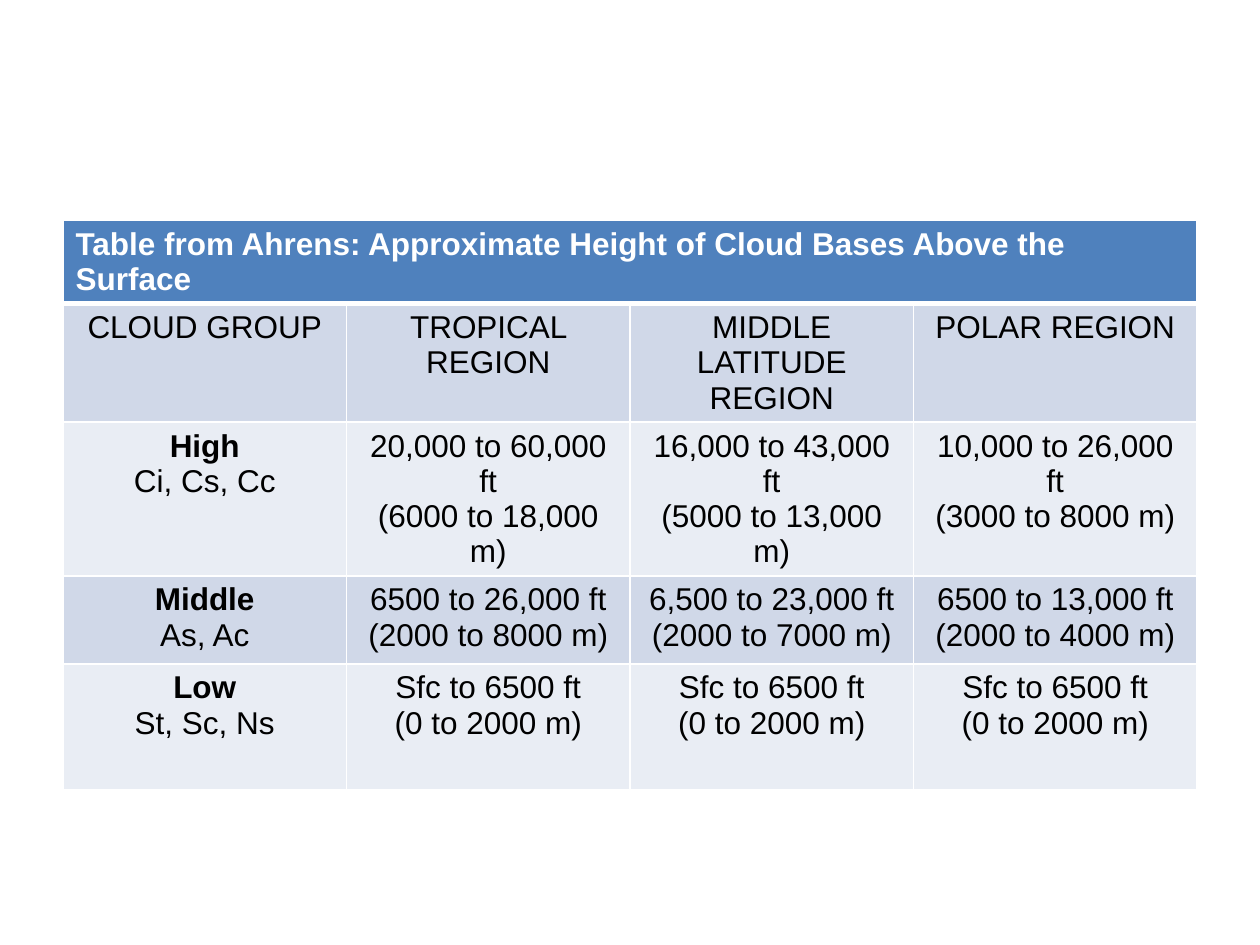
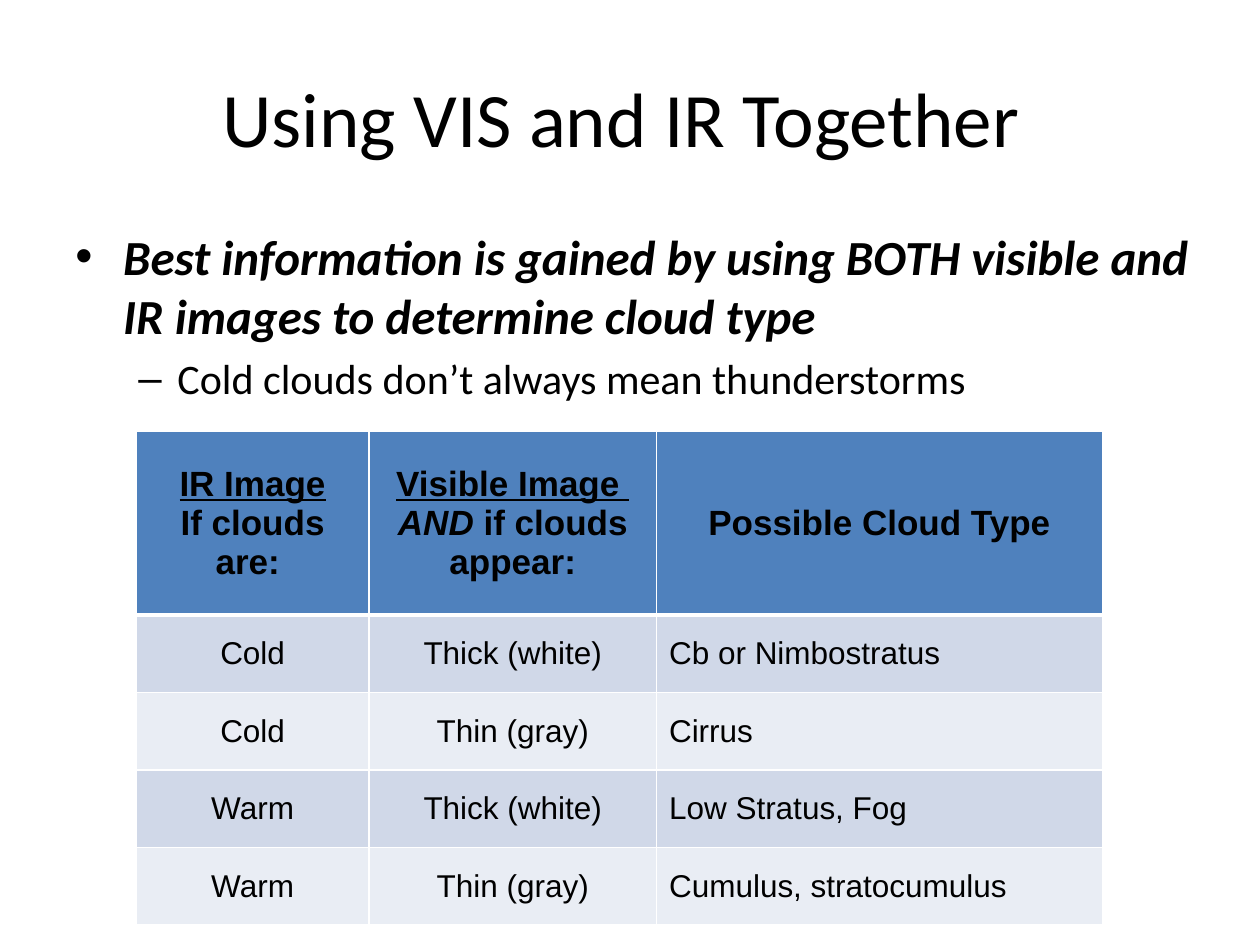
from lxml import etree
from pptx import Presentation
from pptx.dml.color import RGBColor
from pptx.enum.text import MSO_ANCHOR, PP_ALIGN
from pptx.oxml.ns import qn
from pptx.util import Inches, Pt

COLORS = {"text": "000000", "white": "FFFFFF", "header": "4F81BD",
          "band_dark": "D0D8E8", "band_light": "E9EDF4"}
TABLE_FONT = "Arial"
SLIDE_FONT = "Calibri"
THIN, THICK = 1, 3


def add_span(para, text, size, font, style="", color="text"):
    """Add one run; style holds any of the letters b, i and u."""
    span = para.add_run()
    span.text = text
    span.font.name = font
    span.font.size = Pt(size)
    span.font.bold = "b" in style
    span.font.italic = "i" in style
    span.font.underline = "u" in style
    span.font.color.rgb = RGBColor.from_string(COLORS[color])


def add_text_box(page, box, anchor):
    frame = page.shapes.add_textbox(*map(Inches, box)).text_frame
    frame.word_wrap = True
    frame.vertical_anchor = anchor
    return frame


def set_bullet(para, mark, left, hanging):
    props = para._p.get_or_add_pPr()
    props.set("marL", str(Inches(left)))
    props.set("indent", str(-Inches(hanging)))
    etree.SubElement(props, qn("a:buFont"), typeface="Arial")
    etree.SubElement(props, qn("a:buChar"), char=mark)


def set_borders(cell, top, bottom):
    props = cell._tc.get_or_add_tcPr()
    widths = {"lnL": THIN, "lnR": THIN, "lnT": top, "lnB": bottom}
    for index, (side, width) in enumerate(widths.items()):
        line = etree.Element(qn(f"a:{side}"), w=str(Pt(width)))
        fill = etree.SubElement(line, qn("a:solidFill"))
        etree.SubElement(fill, qn("a:srgbClr"), val=COLORS["white"])
        props.insert(index, line)


def add_grid(page, box, widths, heights):
    """Add an empty table with a header row, banded rows and white rules."""
    grid = page.shapes.add_table(len(heights), len(widths),
                                 *map(Inches, box)).table
    for column, width in zip(grid.columns, widths):
        column.width = Inches(width)
    for number, (row, height) in enumerate(zip(grid.rows, heights)):
        row.height = Inches(height)
        band = "band_dark" if number % 2 else "band_light"
        for cell in row.cells:
            cell.fill.solid()
            cell.fill.fore_color.rgb = RGBColor.from_string(
                COLORS[band if number else "header"])
            set_borders(cell, THICK if number == 1 else THIN,
                        THIN if number else THICK)
    return grid


def fill_cell(cell, lines, size=18, align=PP_ALIGN.CENTER,
              anchor=MSO_ANCHOR.TOP, color="text"):
    """Write lines, each a list of (text, style) runs."""
    cell.vertical_anchor = anchor
    frame = cell.text_frame
    for number, runs in enumerate(lines):
        para = frame.add_paragraph() if number else frame.paragraphs[0]
        para.alignment = align
        for text, style in runs:
            add_span(para, text, size, TABLE_FONT, style, color)


# Table of cloud base heights
def add_height_table(page, box):
    regions = ["CLOUD GROUP", "TROPICAL REGION", "MIDDLE LATITUDE REGION",
               "POLAR REGION"]
    groups = [
        ("High", "Ci, Cs, Cc",
         [("20,000 to 60,000 ft", "(6000 to 18,000 m)"),
          ("16,000 to 43,000 ft", "(5000 to 13,000 m)"),
          ("10,000 to 26,000 ft", "(3000 to 8000 m)")]),
        ("Middle", "As, Ac",
         [("6500 to 26,000 ft", "(2000 to 8000 m)"),
          ("6,500 to 23,000 ft", "(2000 to 7000 m)"),
          ("6500 to 13,000 ft", "(2000 to 4000 m)")]),
        ("Low", "St, Sc, Ns", [("Sfc to 6500 ft", "(0 to 2000 m)")] * 3),
    ]
    grid = add_grid(page, box, [box[2] / len(regions)] * len(regions),
                    [0.41, 0.7, 0.7, 0.7, 1])
    caption = grid.cell(0, 0)
    caption.merge(grid.cell(0, len(regions) - 1))
    fill_cell(caption, [[("Table from Ahrens: Approximate Height of Cloud "
                          "Bases Above the Surface", "b")]],
              align=PP_ALIGN.LEFT, color="white")
    for column, region in enumerate(regions):
        fill_cell(grid.cell(1, column), [[(region, "")]])
    for row, (group, clouds, heights) in enumerate(groups, start=2):
        fill_cell(grid.cell(row, 0), [[(group, "b")], [(clouds, "")]])
        for column, (feet, metres) in enumerate(heights, start=1):
            fill_cell(grid.cell(row, column), [[(feet, "")], [(metres, "")]])


# Slide title
def add_title(page, box, text):
    para = add_text_box(page, box, MSO_ANCHOR.MIDDLE).paragraphs[0]
    para.alignment = PP_ALIGN.CENTER
    add_span(para, text, 44, SLIDE_FONT)


# Bulleted advice
def add_advice(page, box):
    frame = add_text_box(page, box, MSO_ANCHOR.TOP)
    point = frame.paragraphs[0]
    set_bullet(point, "•", 0.38, 0.38)
    add_span(point, "Best information is gained by using BOTH visible and "
             "IR images to determine cloud type", 28, SLIDE_FONT, "bi")
    detail = frame.add_paragraph()
    detail.level = 1
    detail.space_before = Pt(4.8)
    set_bullet(detail, "–", 0.81, 0.31)
    add_span(detail, "Cold clouds don’t always mean thunderstorms", 24,
             SLIDE_FONT)


# Table of cloud types by image appearance
def add_type_table(page, box):
    headers = [
        [[("IR Image", "bu")], [("If clouds are: ", "b")]],
        [[("Visible Image ", "bu")],
         [("AND", "bi"), (" if clouds appear:", "b")]],
        [[("Possible Cloud Type", "b")]],
    ]
    cases = [("Cold", "Thick (white)", "Cb or Nimbostratus"),
             ("Cold", "Thin (gray)", "Cirrus"),
             ("Warm", "Thick (white)", "Low Stratus, Fog"),
             ("Warm", "Thin (gray)", "Cumulus, stratocumulus")]
    aligns = [PP_ALIGN.CENTER, PP_ALIGN.CENTER, PP_ALIGN.LEFT]
    grid = add_grid(page, box, [1.85, 2.28, 3.54],
                    [1.46] + [0.615] * len(cases))
    for column, lines in enumerate(headers):
        fill_cell(grid.cell(0, column), lines, size=20,
                  anchor=MSO_ANCHOR.MIDDLE)
    for row, case in enumerate(cases, start=1):
        for column, text in enumerate(case):
            fill_cell(grid.cell(row, column), [[(text, "")]],
                      align=aligns[column], anchor=MSO_ANCHOR.MIDDLE)


def main():
    deck = Presentation()
    deck.slide_width, deck.slide_height = Inches(10), Inches(7.5)
    blank = deck.slide_layouts[6]

    heights_page = deck.slides.add_slide(blank)
    add_height_table(heights_page, (0.5, 1.75, 9, 3.51))

    images_page = deck.slides.add_slide(blank)
    add_title(images_page, (0.5, 0.3, 9, 1.25), "Using VIS and IR Together ")
    add_advice(images_page, (0.5, 1.75, 9.17, 1.83))
    add_type_table(images_page, (1.08, 3.42, 7.67, 3.92))

    deck.save("out.pptx")


if __name__ == "__main__":
    main()
